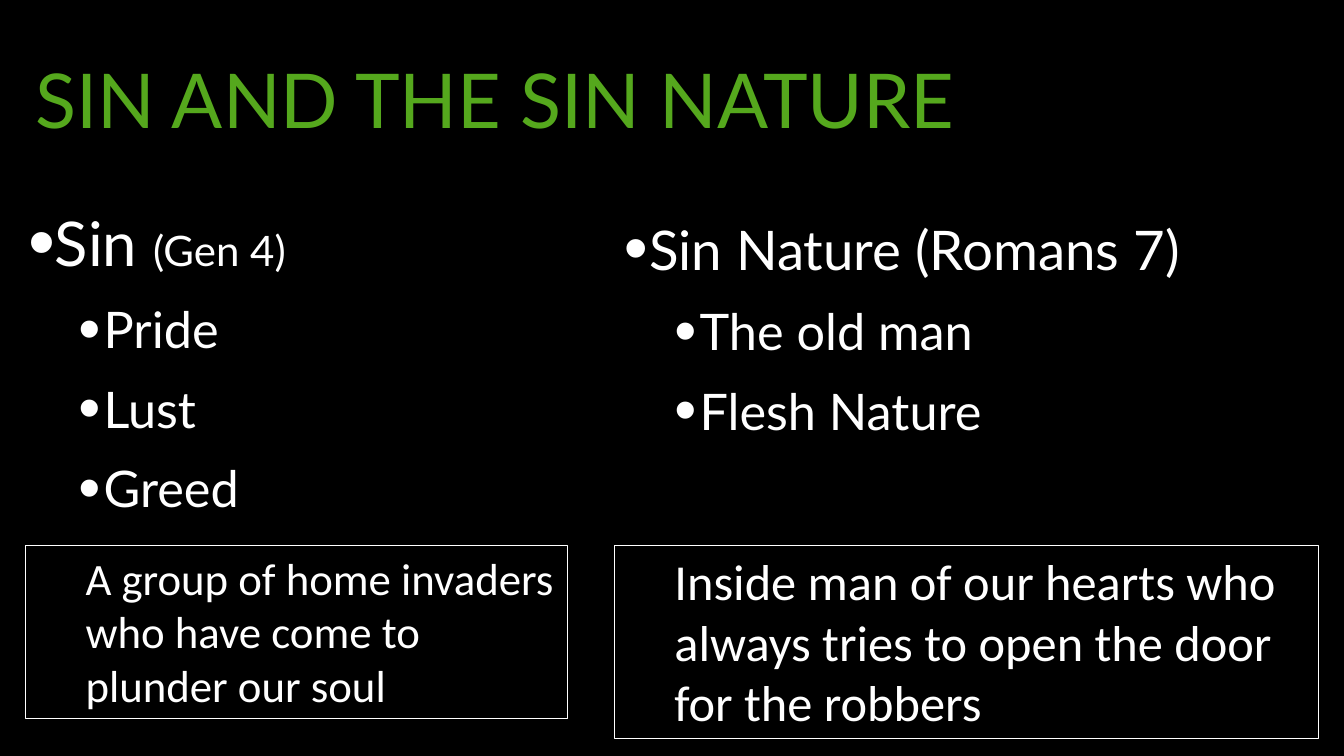
from lxml.etree import SubElement
from pptx import Presentation
from pptx.dml.color import RGBColor
from pptx.enum.shapes import MSO_SHAPE
from pptx.enum.text import MSO_ANCHOR, PP_ALIGN
from pptx.oxml.ns import qn
from pptx.util import Inches, Pt

BLACK = RGBColor(0x00, 0x00, 0x00)
WHITE = RGBColor(0xFF, 0xFF, 0xFF)
GREEN = RGBColor(0x55, 0xA8, 0x1D)

LEFT_MARGIN = 0.25
RIGHT_COLUMN = 6.09
BOX_TOP = 5.41
LIST_HEIGHT = 3.57


def write(paragraph, text, size, font="Lato", color=WHITE):
    run = paragraph.add_run()
    run.text = text
    run.font.size = Pt(size)
    run.font.name = font
    run.font.color.rgb = color


def indent(paragraph, margin, first_line=0.0):
    properties = paragraph._p.get_or_add_pPr()
    properties.set("marL", str(Inches(margin)))
    properties.set("indent", str(Inches(first_line)))
    return properties


def add_bullet(paragraph, level):
    paragraph.level = level
    properties = indent(paragraph, 0.25 + 0.5 * level, -0.25)
    SubElement(properties, qn("a:buSzPct"), val="125000")
    SubElement(properties, qn("a:buFont"), typeface="Arial")
    SubElement(properties, qn("a:buChar"), char="•")


def add_text_frame(slide, left, top, width, height):
    shape = slide.shapes.add_textbox(*map(Inches, (left, top, width, height)))
    shape.text_frame.word_wrap = True
    return shape.text_frame


def add_title(slide, text):
    frame = add_text_frame(slide, LEFT_MARGIN, 0.22, 12.9, 1.62)
    frame.vertical_anchor = MSO_ANCHOR.MIDDLE
    frame.paragraphs[0].line_spacing = 0.9
    write(frame.paragraphs[0], text, 54, color=GREEN)


def add_bullet_list(slide, left, top, width, heading_runs, items):
    """Heading runs are (text, size) pairs; items sit one level below."""
    frame = add_text_frame(slide, left, top, width, LIST_HEIGHT)
    heading = frame.paragraphs[0]
    heading.line_spacing = 1.2
    add_bullet(heading, 0)
    for text, size in heading_runs:
        write(heading, text, size)
    for item in items:
        paragraph = frame.add_paragraph()
        paragraph.line_spacing = 1.2
        paragraph.space_before = Pt(5)
        add_bullet(paragraph, 1)
        write(paragraph, item, 36)


def add_outlined_box(slide, left, width, height, text, size):
    shape = slide.shapes.add_shape(
        MSO_SHAPE.RECTANGLE, *map(Inches, (left, BOX_TOP, width, height)))
    shape.shadow.inherit = False
    shape.fill.background()
    shape.line.color.rgb = WHITE
    shape.line.width = Pt(0.75)
    frame = shape.text_frame
    frame.word_wrap = True
    frame.vertical_anchor = MSO_ANCHOR.TOP
    paragraph = frame.paragraphs[0]
    paragraph.alignment = PP_ALIGN.LEFT
    paragraph.level = 1
    indent(paragraph, 0.5)
    write(paragraph, text, size, font="Calibri")


def main():
    presentation = Presentation()
    presentation.slide_width = Inches(13.33)
    presentation.slide_height = Inches(7.5)
    slide = presentation.slides.add_slide(presentation.slide_layouts[6])
    slide.background.fill.solid()
    slide.background.fill.fore_color.rgb = BLACK

    add_title(slide, "SIN AND THE SIN NATURE")
    add_bullet_list(slide, 0.18, 1.84, 5.13, [("Sin ", 44), ("(Gen 4)", 30)],
                    ["Pride", "Lust", "Greed"])
    add_bullet_list(slide, RIGHT_COLUMN, 1.96, 6.09,
                    [("Sin Nature (Romans 7)", 39)],
                    ["The old man", "Flesh Nature"])
    add_outlined_box(slide, LEFT_MARGIN, 5.38, 1.72,
                     "A group of home invaders who have come to plunder our soul", 32)
    add_outlined_box(slide, RIGHT_COLUMN, 6.99, 1.92,
                     "Inside man of our hearts who always tries to open the door "
                     "for the robbers", 36)
    presentation.save("out.pptx")


if __name__ == "__main__":
    main()
